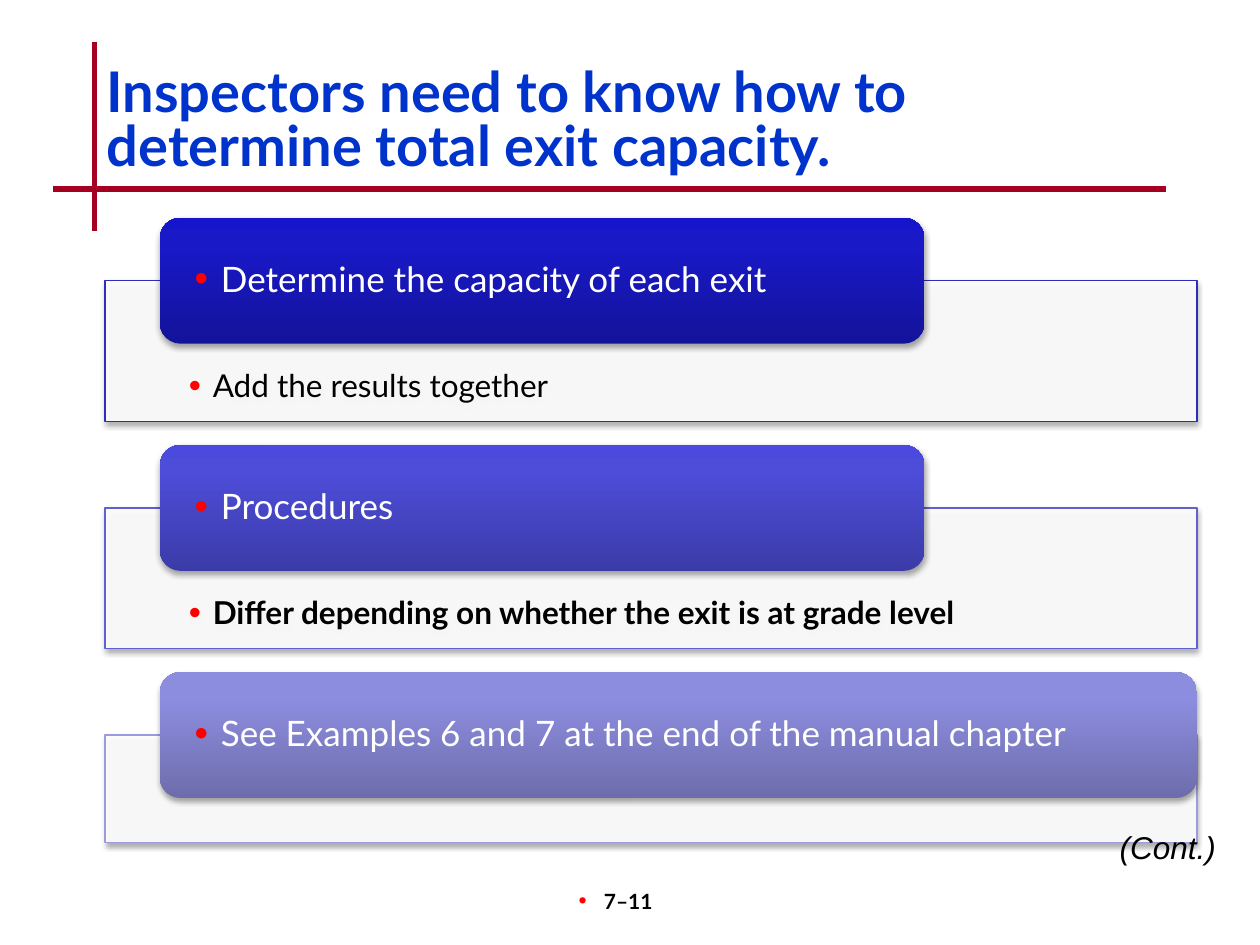
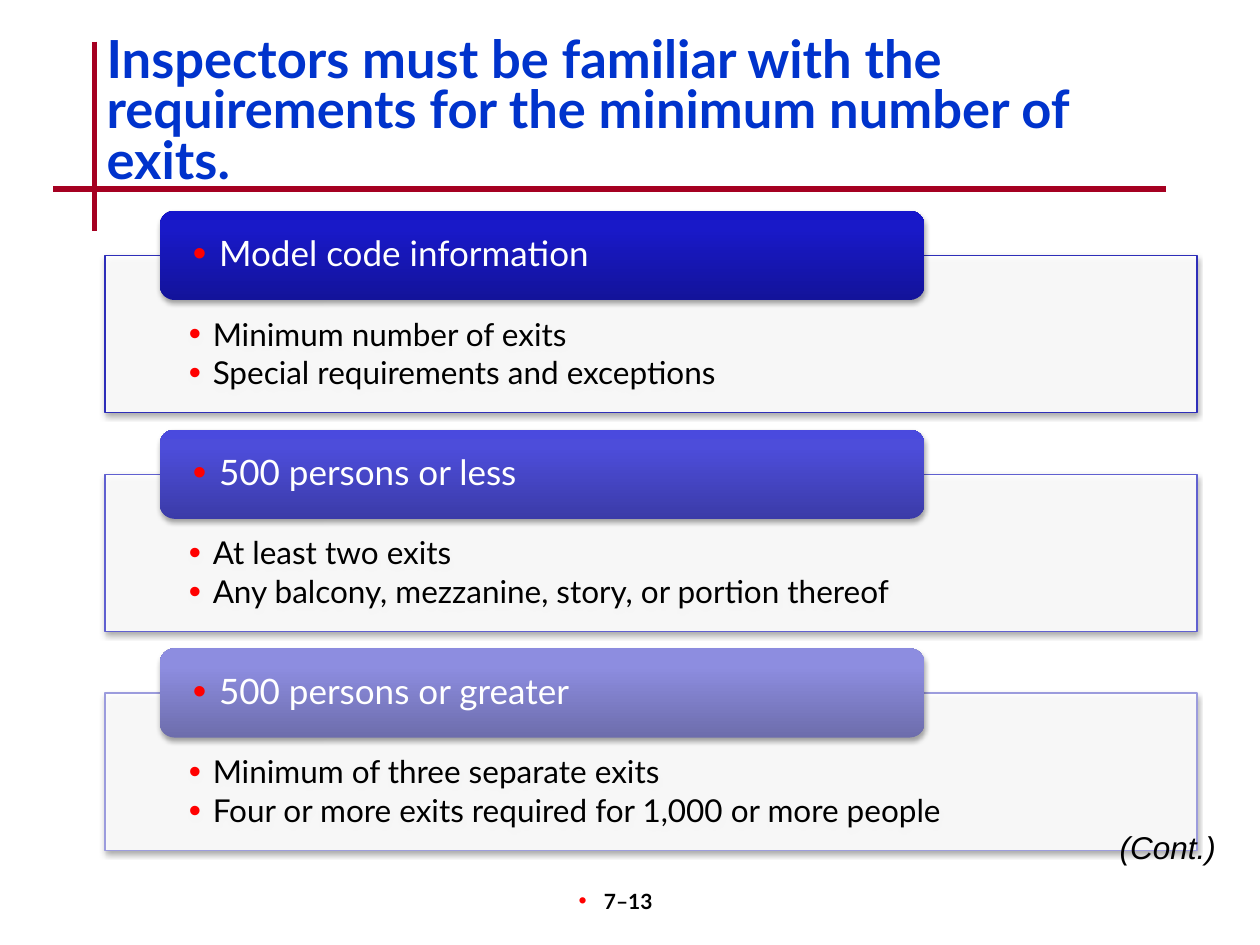
import lxml.etree
import pptx
import pptx.dml.color
import pptx.enum.shapes
import pptx.enum.text
import pptx.oxml.ns
import pptx.util

Cm, Pt = pptx.util.Cm, pptx.util.Pt
ALIGN = pptx.enum.text.PP_ALIGN
ANCHOR = pptx.enum.text.MSO_ANCHOR
SHAPE = pptx.enum.shapes.MSO_SHAPE
qn = pptx.oxml.ns.qn

COLORS = {"title": "0033CC", "rule": "A50021", "text": "000000",
          "white": "FFFFFF", "bullet": "FF0000", "shadow": "000000"}
SECTION_COLORS = [
    {"line": "2E2EB9", "stops": {0: "13139A", 80: "1919C8", 100: "1515CC"}},
    {"line": "6060D0", "stops": {0: "3B3BA8", 80: "4D4DDA", 100: "4A4ADE"}},
    {"line": "9C9CDD", "stops": {0: "6D6DAC", 80: "8D8DE0", 100: "8C8CE2"}},
]
FONTS = {
    "title": {"name": "Lato", "size": Pt(32), "bold": True},
    "heading": {"name": "Lato", "size": Pt(20)},
    "item": {"name": "Lato", "size": Pt(18)},
    "page": {"name": "Lato", "size": Pt(12), "bold": True},
    "cont": {"name": "Arial", "size": Pt(18), "italic": True},
}
HEADING_PARA = {"line_spacing": 0.9, "alignment": ALIGN.LEFT}
ITEM_PARA = {**HEADING_PARA, "space_after": Pt(2.8)}

SLIDES = [
    {
        "title": "Inspectors need to know how to determine total exit capacity.",
        "title_top": 1.27, "title_size": 32, "page": "7–11",
        "top": 4.39, "pitch": 4.58, "tab_height": 2.54,
        "sections": [
            {"heading": "Determine the capacity of each exit",
             "items": ["Add the results together"], "height": 2.84},
            {"heading": "Procedures", "bold": True, "height": 2.84,
             "items": ["Differ depending on whether the exit is at grade level"]},
            {"heading": "See Examples 6 and 7 at the end of the manual chapter",
             "items": [], "height": 2.16, "tab_width": 20.91},
        ],
    },
    {
        "title": "Inspectors must be familiar with the requirements "
                 "for the minimum number of exits.",
        "title_top": 0.64, "title_size": 30, "page": "7–13",
        "top": 4.25, "pitch": 4.41, "tab_height": 1.8,
        "sections": [
            {"heading": "Model code information", "height": 3.17,
             "items": ["Minimum number of exits",
                       "Special requirements and exceptions"]},
            {"heading": "500 persons or less", "height": 3.17,
             "items": ["At least two exits",
                       "Any balcony, mezzanine, story, or portion thereof"]},
            {"heading": "500 persons or greater", "height": 3.17,
             "items": ["Minimum of three separate exits",
                       "Four or more exits required for 1,000 or more people"]},
        ],
    },
]


def rgb(value):
    """Turn a hex string into a colour."""
    return pptx.dml.color.RGBColor.from_string(value)


def add_xml(parent, tag, **attrs):
    """Append a drawing element with attributes."""
    el = lxml.etree.SubElement(parent, qn(tag))
    for key, value in attrs.items():
        el.set(key, str(value))
    return el


def assign(obj, values):
    """Set attributes of an object from a dict."""
    for key, value in values.items():
        setattr(obj, key, value)


def add_bullet(p, indent):
    """Give a paragraph a red bullet with a hanging indent."""
    pPr = p._p.get_or_add_pPr()
    pPr.set("marL", str(Cm(indent)))
    pPr.set("indent", str(-Cm(indent)))
    add_xml(add_xml(pPr, "a:buClr"), "a:srgbClr", val=COLORS["bullet"])
    add_xml(pPr, "a:buSzPct", val=110000)
    add_xml(pPr, "a:buFont", typeface="Arial")
    add_xml(pPr, "a:buChar", char="•")


def write(sp, lines, font, color, para, bullet=None, insets=(0.25, 0.13, 0.25, 0.13),
          anchor=ANCHOR.TOP):
    """Fill a shape with formatted paragraphs."""
    tf = sp.text_frame
    sides = ("margin_left", "margin_top", "margin_right", "margin_bottom")
    assign(tf, {"word_wrap": True, "vertical_anchor": anchor})
    assign(tf, {side: Cm(inset) for side, inset in zip(sides, insets)})
    for i, line in enumerate(lines):
        p = tf.add_paragraph() if i else tf.paragraphs[0]
        if bullet:
            add_bullet(p, bullet)
        assign(p, para)
        r = p.add_run()
        r.text = line
        assign(r.font, font)
        r.font.color.rgb = rgb(COLORS[color])


def add_text(s, box, *args, **kwargs):
    """Add a text box and write into it."""
    sp = s.shapes.add_textbox(*map(Cm, box))
    write(sp, *args, **kwargs)


def add_shadow(sp):
    """Give a shape a soft shadow below it."""
    sp.shadow.inherit = False
    effects = sp._element.spPr.find(qn("a:effectLst"))
    shadow = add_xml(effects, "a:outerShdw", blurRad=Pt(3.1), dist=Pt(1.8),
                     dir=5400000, rotWithShape=0)
    clr = add_xml(shadow, "a:srgbClr", val=COLORS["shadow"])
    add_xml(clr, "a:alpha", val=35000)


def add_panel(s, box, line):
    """Add the translucent panel that holds the items of a section."""
    sp = s.shapes.add_shape(SHAPE.RECTANGLE, *map(Cm, box))
    sp.fill.solid()
    sp.fill.fore_color.rgb = rgb(COLORS["white"])
    clr = sp._element.spPr.find(qn("a:solidFill")).find(qn("a:srgbClr"))
    add_xml(clr, "a:alpha", val=90000)
    sp.line.color.rgb = rgb(line)
    sp.line.width = Pt(0.75)
    add_shadow(sp)
    return sp


def add_tab(s, box, stops):
    """Add the rounded gradient tab that holds a section heading."""
    sp = s.shapes.add_shape(SHAPE.ROUNDED_RECTANGLE, *map(Cm, box))
    sp.fill.gradient()
    sp.fill.gradient_angle = 90
    stop_list = sp._element.spPr.find(qn("a:gradFill")).find(qn("a:gsLst"))
    for stop in list(stop_list):
        stop_list.remove(stop)
    for pos, color in stops.items():
        add_xml(add_xml(stop_list, "a:gs", pos=pos * 1000), "a:srgbClr", val=color)
    sp.line.fill.background()
    add_shadow(sp)
    return sp


def add_section(s, left, top, tab_height, section, colors):
    """Place a panel with its tab overlapping the upper edge."""
    panel = add_panel(s, (left, top + tab_height / 2, 22.01, section["height"]),
                      colors["line"])
    font = {**FONTS["item"], "bold": section.get("bold", False)}
    write(panel, section["items"], font, "text", ITEM_PARA, bullet=0.48,
          insets=(1.69, 0.71 * tab_height, 1.69, 0.36))
    tab = add_tab(s, (left + 1.1, top, section.get("tab_width", 15.42), tab_height),
                  colors["stops"])
    write(tab, [section["heading"]], FONTS["heading"], "white", HEADING_PARA,
          bullet=0.53, insets=(0.58, 0, 0.58, 0), anchor=ANCHOR.MIDDLE)


def add_frame(s, page):
    """Add the crossing rules and the page number."""
    for ends in ((1.9, 0.84, 1.9, 4.65), (1.07, 3.81, 23.5, 3.81)):
        rule = s.shapes.add_connector(pptx.enum.shapes.MSO_CONNECTOR.STRAIGHT,
                                      *map(Cm, ends))
        rule.line.color.rgb = rgb(COLORS["rule"])
        rule.line.width = Pt(3)
        add_xml(rule._element.spPr, "a:effectLst")
    add_text(s, (9.96, 17.78, 5.28, 1.27), [page], FONTS["page"], "text",
             {"alignment": ALIGN.CENTER}, bullet=0.51, insets=(0.25, 0.13, 0.63, 0.13))


def build_slide(prs, content):
    """Build one slide of stacked sections."""
    s = prs.slides.add_slide(prs.slide_layouts[6])
    add_frame(s, content["page"])
    add_text(s, (1.9, content["title_top"], 21.59, 2.97), [content["title"]],
             {**FONTS["title"], "size": Pt(content["title_size"])}, "title",
             {"line_spacing": 0.8})
    for i, (section, colors) in enumerate(zip(content["sections"], SECTION_COLORS)):
        add_section(s, 2.12, content["top"] + i * content["pitch"],
                    content["tab_height"], section, colors)
    add_text(s, (20.52, 16.56, 4.24, 1.02), ["(Cont.)"], FONTS["cont"], "text",
             {"alignment": ALIGN.RIGHT})


def main():
    """Build and save the presentation."""
    prs = pptx.Presentation()
    assign(prs, {"slide_width": Cm(25.4), "slide_height": Cm(19.05)})
    for content in SLIDES:
        build_slide(prs, content)
    prs.save("out.pptx")


if __name__ == "__main__":
    main()
